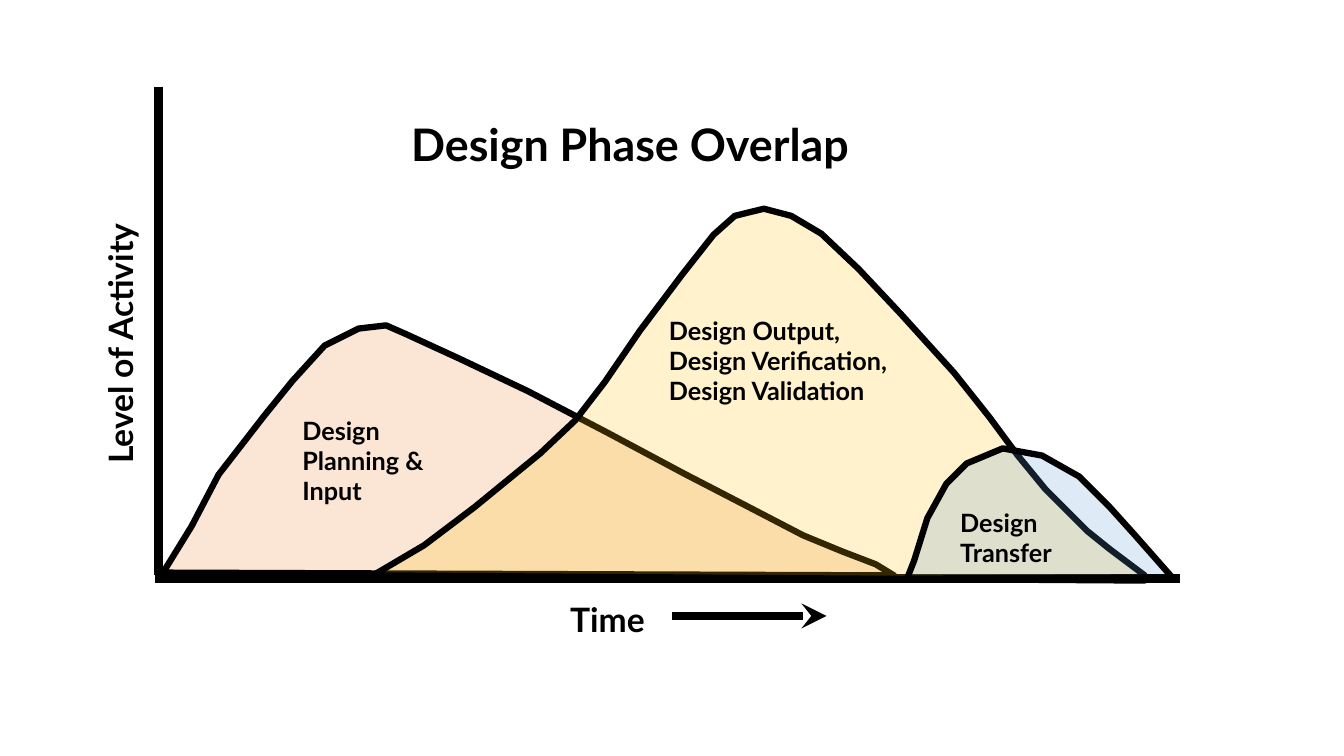
from lxml import etree
from pptx import Presentation
from pptx.dml.color import RGBColor
from pptx.enum.shapes import MSO_CONNECTOR
from pptx.enum.text import MSO_AUTO_SIZE
from pptx.oxml.ns import qn
from pptx.util import Cm, Pt

STRAIGHT = MSO_CONNECTOR.STRAIGHT
GROW = MSO_AUTO_SIZE.SHAPE_TO_FIT_TEXT

COLORS = {
    "ink": "000000",
    "planning": "ED7D31",
    "output": "FFC000",
    "transfer": "5B9BD5",
}

# Outlines of the phases, in centimetres
PHASES = {
    "planning": [
        (4.11, 14.43), (4.83, 13.26), (5.51, 11.96), (6.65, 10.49), (7.37, 9.6),
        (8.18, 8.71), (9.04, 8.28), (9.73, 8.2), (10.21, 8.41), (11.58, 9.04),
        (13.31, 9.86), (15.34, 10.92), (17.25, 11.94), (18.72, 12.7),
        (20.24, 13.49), (21.21, 13.89), (22.07, 14.22), (22.53, 14.5),
    ],
    "output": [
        (9.4, 14.5), (10.69, 13.74), (11.96, 12.78), (13.61, 11.43), (14.5, 10.59),
        (15.24, 9.63), (16.13, 8.33), (17.2, 6.91), (17.98, 5.92), (18.52, 5.44),
        (19.25, 5.26), (19.94, 5.44), (20.7, 5.89), (21.64, 6.78), (22.71, 7.92),
        (24.05, 9.4), (24.94, 10.52), (25.65, 11.48), (26.34, 12.32),
        (27.41, 13.39), (27.97, 13.84), (28.85, 14.5), (28.85, 14.63),
    ],
    "transfer": [
        (22.86, 14.58), (23.04, 14.12), (23.37, 13.06), (23.85, 12.19),
        (24.36, 11.68), (25.27, 11.3), (26.26, 11.48), (27.2, 12.01),
        (27.94, 12.75), (28.58, 13.46), (29.54, 14.55),
    ],
}

# Phase labels: text, left, top, width, height
LABELS = [
    ("Design\nPlanning &\nInput", 7.37, 10.34, 4.04, 2.57),
    ("Design Output,\nDesign Verification,\nDesign Validation", 16.61, 7.82, 6.99, 2.57),
    ("Design\nTransfer", 23.95, 12.65, 4.27, 1.8),
]


class Sketch:
    """Draws on one slide in one style."""

    font_name = "Lato"

    def __init__(self, slide):
        self.shapes = slide.shapes

    def color(self, name):
        return RGBColor.from_string(COLORS[name])

    def line(self, x1, y1, x2, y2, arrow=False):
        line = self.shapes.add_connector(STRAIGHT, Cm(x1), Cm(y1), Cm(x2), Cm(y2))
        line.line.color.rgb = self.color("ink")
        line.line.width = Pt(6)
        if arrow:
            outline = line.line._get_or_add_ln()
            etree.SubElement(outline, qn("a:tailEnd"), type="stealth")
        etree.SubElement(line._element.spPr, qn("a:effectLst"))

    def phase(self, name, points):
        start, *others = [(Cm(x), Cm(y)) for x, y in points]
        builder = self.shapes.build_freeform(*start)
        builder.add_line_segments(others, close=True)
        area = builder.convert_to_shape()
        area.shadow.inherit = False
        area.fill.solid()
        area.fill.fore_color.rgb = self.color(name)
        fill_color = area._element.spPr.find(qn("a:solidFill"))[0]
        etree.SubElement(fill_color, qn("a:alpha"), val="20000")
        area.line.color.rgb = self.color("ink")
        area.line.width = Pt(4.5)

    def text(self, text, left, top, width, height, size=18, rotation=0):
        box = self.shapes.add_textbox(Cm(left), Cm(top), Cm(width), Cm(height))
        box.rotation = rotation
        frame = box.text_frame
        frame.word_wrap = True
        frame.auto_size = GROW
        frame.text = text
        for para in frame.paragraphs:
            for span in para.runs:
                span.font.name = self.font_name
                span.font.size = Pt(size)
                span.font.bold = True
                span.font.color.rgb = self.color("ink")


def main():
    deck = Presentation()
    deck.slide_width, deck.slide_height = Cm(33.87), Cm(19.05)
    page = deck.slides.add_slide(deck.slide_layouts[6])
    sketch = Sketch(page)

    # Axes
    sketch.line(3.99, 2.18, 3.99, 14.5)
    sketch.line(29.74, 14.58, 3.91, 14.58)

    # Overlapping phases and their labels
    for name, points in PHASES.items():
        sketch.phase(name, points)
    for label in LABELS:
        sketch.text(*label)

    # Axis titles and time arrow
    sketch.text("Level of Activity", -1.73, 6.55, 9.5, 1.27, size=24, rotation=270)
    sketch.text("Time", 14.12, 14.96, 9.5, 1.27, size=24)
    sketch.line(16.94, 15.52, 20.83, 15.52, arrow=True)

    # Title
    sketch.text("Design Phase Overlap", 10.11, 2.82, 12.98, 1.63, size=32)

    deck.save("out.pptx")


if __name__ == "__main__":
    main()
